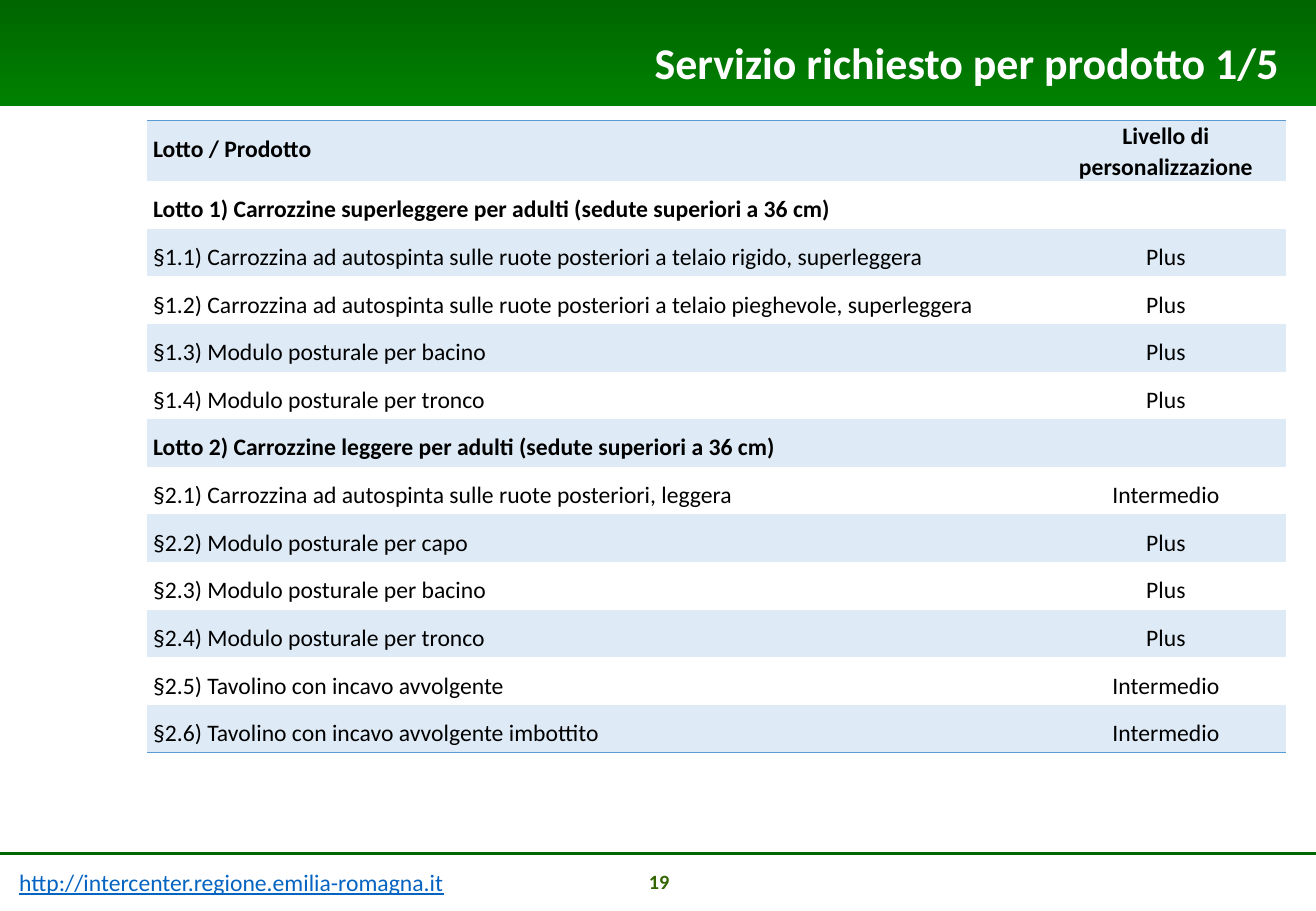
"""Build the slide on the service level required for each product."""
from lxml import etree
from pptx import Presentation
from pptx.dml.color import RGBColor
from pptx.enum.shapes import MSO_CONNECTOR, MSO_SHAPE
from pptx.enum.text import MSO_ANCHOR, PP_ALIGN
from pptx.oxml.ns import qn
from pptx.util import Inches, Pt

LEFT, CENTER, RIGHT = PP_ALIGN.LEFT, PP_ALIGN.CENTER, PP_ALIGN.RIGHT
MIDDLE, TOP = MSO_ANCHOR.MIDDLE, MSO_ANCHOR.TOP
RECTANGLE, STRAIGHT = MSO_SHAPE.RECTANGLE, MSO_CONNECTOR.STRAIGHT

TITLE = "Servizio richiesto per prodotto 1/5"
SITE = "http://intercenter.regione.emilia-romagna.it"
PAGE = "19"
HEADER = ("Lotto / Prodotto", "Livello di personalizzazione")
LOTS = [
    ("Lotto 1) Carrozzine superleggere per adulti (sedute superiori a 36 cm)", [
        ("§1.1) Carrozzina ad autospinta sulle ruote posteriori a telaio rigido, superleggera", "Plus"),
        ("§1.2) Carrozzina ad autospinta sulle ruote posteriori a telaio pieghevole, superleggera", "Plus"),
        ("§1.3) Modulo posturale per bacino", "Plus"),
        ("§1.4) Modulo posturale per tronco", "Plus"),
    ]),
    ("Lotto 2) Carrozzine leggere per adulti (sedute superiori a 36 cm)", [
        ("§2.1) Carrozzina ad autospinta sulle ruote posteriori, leggera", "Intermedio"),
        ("§2.2) Modulo posturale per capo", "Plus"),
        ("§2.3) Modulo posturale per bacino", "Plus"),
        ("§2.4) Modulo posturale per tronco", "Plus"),
        ("§2.5) Tavolino con incavo avvolgente", "Intermedio"),
        ("§2.6) Tavolino con incavo avvolgente imbottito", "Intermedio"),
    ]),
]

FONT = "Calibri"
COLORS = {"dark": "006600", "green": "008000", "page": "336600", "site": "0563C1",
          "title": "FFFFFF", "text": "000000", "band": "DEEBF7", "rule": "5B9BD5"}
WIDTH, HEIGHT = 10.83, 7.5
BANNER_HEIGHT = 0.87
FOOTER_TOP = 7.03
TABLE_BOX = (1.21, 0.99, 9.37, 5.21)
COLUMNS = (7.4, 1.97)
HEADER_HEIGHT = 0.5
NO_STYLE = "{2D5ABB26-0587-4C30-8999-92F81FD0307C}"


def color(name):
    return RGBColor.from_string(COLORS[name])


def style(paragraph, size, ink, align, bold=False, underline=None):
    paragraph.alignment = align
    font = paragraph.font
    font.name, font.size, font.bold = FONT, Pt(size), bold
    font.underline = underline
    font.color.rgb = color(ink)


def add_label(slide, box, text, *look):
    frame = slide.shapes.add_textbox(*map(Inches, box)).text_frame
    frame.word_wrap = True
    frame.vertical_anchor = MIDDLE
    frame.text = text
    style(frame.paragraphs[0], *look)


def add_banner(slide):
    banner = slide.shapes.add_shape(RECTANGLE, 0, 0, Inches(WIDTH), Inches(BANNER_HEIGHT))
    banner.shadow.inherit = False
    banner.line.fill.background()
    banner.fill.gradient()
    banner.fill.gradient_angle = 270
    for stop, name in zip(banner.fill.gradient_stops, ("dark", "green")):
        stop.color.rgb = color(name)


def add_footer_rule(slide):
    rule = slide.shapes.add_connector(STRAIGHT, 0, Inches(FOOTER_TOP), Inches(WIDTH), Inches(FOOTER_TOP))
    rule.line.color.rgb = color("dark")
    rule.line.width = Pt(1.75)
    etree.SubElement(rule._element.spPr, qn("a:effectLst"))


def add_border(cell, side):
    border = etree.Element(qn(side), w=str(Pt(1)))
    fill = etree.SubElement(border, qn("a:solidFill"))
    etree.SubElement(fill, qn("a:srgbClr"), val=COLORS["rule"])
    cell._tc.get_or_add_tcPr().insert(0, border)


def fill_cell(cell, text, align, bold, spacing, banded):
    cell.margin_left = cell.margin_right = Inches(0.05)
    cell.margin_top = cell.margin_bottom = 0
    cell.vertical_anchor = TOP
    if banded:
        cell.fill.solid()
        cell.fill.fore_color.rgb = color("band")
    else:
        cell.fill.background()
    if text:
        cell.text = text
        paragraph = cell.text_frame.paragraphs[0]
        paragraph.line_spacing = spacing
        style(paragraph, 14, "text", align, bold)


def add_services(slide):
    rows = [(HEADER, True)]
    for lot, products in LOTS:
        rows.append(((lot, ""), True))
        rows += [(product, False) for product in products]
    last = len(rows) - 1
    table = slide.shapes.add_table(len(rows), len(COLUMNS), *map(Inches, TABLE_BOX)).table
    table.first_row = table.horz_banding = False
    table._tbl.tblPr.find(qn("a:tableStyleId")).text = NO_STYLE
    for column, width in zip(table.columns, COLUMNS):
        column.width = Inches(width)
    row_height = (TABLE_BOX[3] - HEADER_HEIGHT) / last
    for r, (texts, bold) in enumerate(rows):
        table.rows[r].height = Inches(row_height if r else HEADER_HEIGHT)
        for c, (text, align) in enumerate(zip(texts, (LEFT, CENTER))):
            cell = table.cell(r, c)
            spacing = 1.07 if (r, c) == (0, 1) else 1.5
            fill_cell(cell, text, align, bold, spacing, r % 2 == 0)
            if r in (0, last):
                add_border(cell, "a:lnB" if r else "a:lnT")


def main():
    deck = Presentation()
    deck.slide_width, deck.slide_height = Inches(WIDTH), Inches(HEIGHT)
    slide = deck.slides.add_slide(deck.slide_layouts[6])
    add_banner(slide)
    add_footer_rule(slide)
    add_label(slide, (0.06, 7.09, 4.81, 0.34), SITE, 14, "site", LEFT, False, True)
    add_label(slide, (4.3, 7.12, 2.25, 0.27), PAGE, 12, "page", CENTER, True)
    add_services(slide)
    add_label(slide, (0.65, 0.24, 9.98, 0.54), TITLE, 26, "title", RIGHT, True)
    deck.save("out.pptx")


if __name__ == "__main__":
    main()
